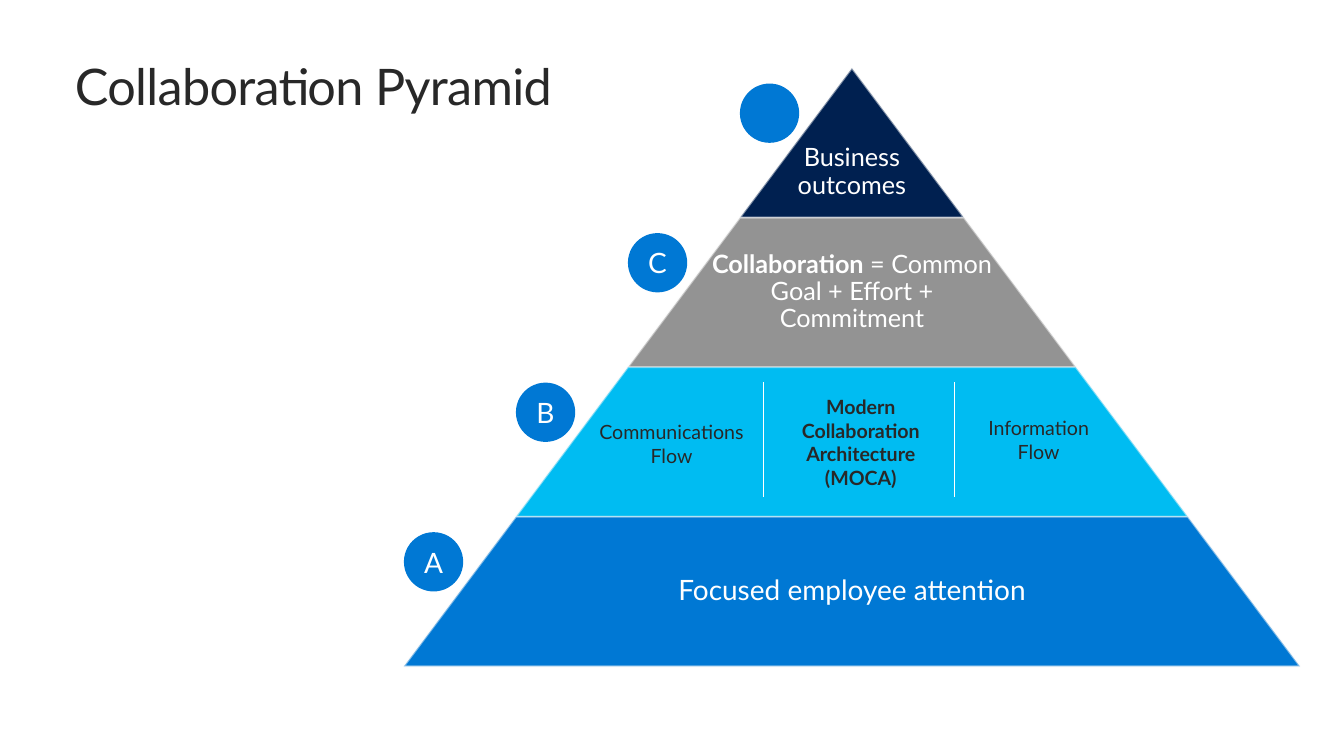
from dataclasses import dataclass

from lxml import etree
from pptx import Presentation
from pptx.dml.color import RGBColor
from pptx.enum.shapes import MSO_CONNECTOR, MSO_SHAPE
from pptx.enum.text import MSO_ANCHOR, PP_ALIGN
from pptx.oxml.ns import qn
from pptx.util import Pt

CENTER, LEFT = PP_ALIGN.CENTER, PP_ALIGN.LEFT
MIDDLE, TOP = MSO_ANCHOR.MIDDLE, MSO_ANCHOR.TOP
ELLIPSE, STRAIGHT = MSO_SHAPE.OVAL, MSO_CONNECTOR.STRAIGHT

FONT = "Lato"
COLORS = {
    "navy": "002050",
    "gray": "939393",
    "cyan": "00BCF2",
    "blue": "0078D4",
    "edge": "F9F9F9",
    "white": "FFFFFF",
    "ink": "282828",
}

# Pyramid geometry, in points
APEX_X, APEX_Y = 620.7, 49.7
TIER_HEIGHT, HALF_STEP = 108.95, 81.6
BADGE_SIZE, BADGE_DROP = 43.2, 11.2
DIVIDER_TOP, DIVIDER_BOTTOM = 278.6, 362.2
DIVIDERS = (556.6, 695.5)


@dataclass(frozen=True)
class Span:
    text: str
    size: float
    color: str = "white"
    bold: bool = False
    spacing: float = 0


@dataclass(frozen=True)
class Tier:
    fill: str
    badge: str
    spans: tuple[Span, ...] = ()
    side_inset: float = 2.2
    top_inset: float = 2.2


@dataclass(frozen=True)
class Label:
    left: float
    top: float
    width: float
    height: float
    span: Span
    align: PP_ALIGN = CENTER


# Tiers from the apex down
TIERS = (
    Tier("navy", "", (Span("Business\noutcomes", 18.4),), top_inset=45),
    Tier("gray", "C", (Span("Collaboration", 18.4, bold=True),
                       Span(" = Common Goal + Effort + Commitment", 18.4)), 59),
    Tier("cyan", "B"),
    Tier("blue", "A", (Span("Focused employee attention", 20.4),), 116),
)

LABELS = (
    Label(47.5, 36.7, 885, 44.6,
          Span("Collaboration Pyramid", 36.7, "ink", spacing=-0.5), LEFT),
    Label(414, 302.4, 150.5, 42.5, Span("Communications Flow", 14.3, "ink")),
    Label(549.4, 284.4, 155.5, 77.8,
          Span("Modern\nCollaboration Architecture\n(MOCA)", 14.3, "ink", True)),
    Label(679, 299.5, 155.5, 42.5, Span("Information\nFlow", 14.3, "ink")),
)


def rgb(name: str) -> RGBColor:
    return RGBColor.from_string(COLORS[name])


def write(shape, spans: tuple[Span, ...], align: PP_ALIGN, anchor: MSO_ANCHOR,
          insets: tuple[float, float, float], line_spacing: float = 1.0) -> None:
    """Fill a shape with one paragraph; insets are side, top, bottom."""
    frame = shape.text_frame
    frame.word_wrap = True
    frame.vertical_anchor = anchor
    side, top, bottom = insets
    frame.margin_left = frame.margin_right = Pt(side)
    frame.margin_top, frame.margin_bottom = Pt(top), Pt(bottom)
    para = frame.paragraphs[0]
    para.alignment = align
    para.line_spacing = line_spacing
    for span in spans:
        for index, line in enumerate(span.text.split("\n")):
            if index:
                para.add_line_break()
            run = para.add_run()
            run.text = line
            run.font.name = FONT
            run.font.size = Pt(span.size)
            run.font.bold = span.bold
            run.font.color.rgb = rgb(span.color)
            if span.spacing:
                run.font._element.set("spc", str(round(span.spacing * 100)))


def paint(shape, fill: str) -> None:
    shape.shadow.inherit = False
    shape.fill.solid()
    shape.fill.fore_color.rgb = rgb(fill)


def draw_tier(page, tier: Tier, level: int) -> None:
    top, bottom = (APEX_Y + TIER_HEIGHT * row for row in (level, level + 1))
    upper, lower = HALF_STEP * level, HALF_STEP * (level + 1)
    corners = [(APEX_X - lower, bottom), (APEX_X - upper, top),
               (APEX_X + upper, top), (APEX_X + lower, bottom)]
    points = [(Pt(x), Pt(y)) for x, y in corners]
    builder = page.shapes.build_freeform(*points[0], scale=1.0)
    builder.add_line_segments(points[1:], close=True)
    shape = builder.convert_to_shape()
    paint(shape, tier.fill)
    shape.line.width = Pt(1.35)
    shape.line.color.rgb = rgb("edge")
    color = shape.line._ln.find(qn("a:solidFill"))[0]
    etree.SubElement(color, qn("a:alpha")).set("val", "50000")
    if tier.spans:
        write(shape, tier.spans, CENTER, MIDDLE,
              (tier.side_inset, tier.top_inset, 2.2), 0.9)


def draw_badge(page, tier: Tier, level: int) -> None:
    left = APEX_X - HALF_STEP * (level + 1)
    top = APEX_Y + TIER_HEIGHT * level + BADGE_DROP
    badge = page.shapes.add_shape(ELLIPSE, Pt(left), Pt(top),
                                  Pt(BADGE_SIZE), Pt(BADGE_SIZE))
    paint(badge, "blue")
    badge.line.fill.background()
    if tier.badge:
        write(badge, (Span(tier.badge, 20.4),), CENTER, MIDDLE, (0, 0, 0))


def draw_divider(page, x: float) -> None:
    line = page.shapes.add_connector(STRAIGHT, Pt(x), Pt(DIVIDER_TOP),
                                     Pt(x), Pt(DIVIDER_BOTTOM))
    line.line.width = Pt(0.75)
    line.line.color.rgb = rgb("white")
    etree.SubElement(line._element.spPr, qn("a:effectLst"))


def draw_label(page, label: Label) -> None:
    box = page.shapes.add_textbox(Pt(label.left), Pt(label.top),
                                  Pt(label.width), Pt(label.height))
    write(box, (label.span,), label.align, TOP, (7.2, 3.6, 3.6))


def main() -> None:
    deck = Presentation()
    deck.slide_width, deck.slide_height = Pt(979.2), Pt(550.8)
    page = deck.slides.add_slide(deck.slide_layouts[6])

    # Pyramid tiers with their badges
    for level, tier in enumerate(TIERS):
        draw_tier(page, tier, level)
    for level, tier in enumerate(TIERS):
        draw_badge(page, tier, level)

    # Columns of the cyan tier, then title and column texts
    for x in DIVIDERS:
        draw_divider(page, x)
    for label in LABELS:
        draw_label(page, label)

    deck.save("out.pptx")


if __name__ == "__main__":
    main()
